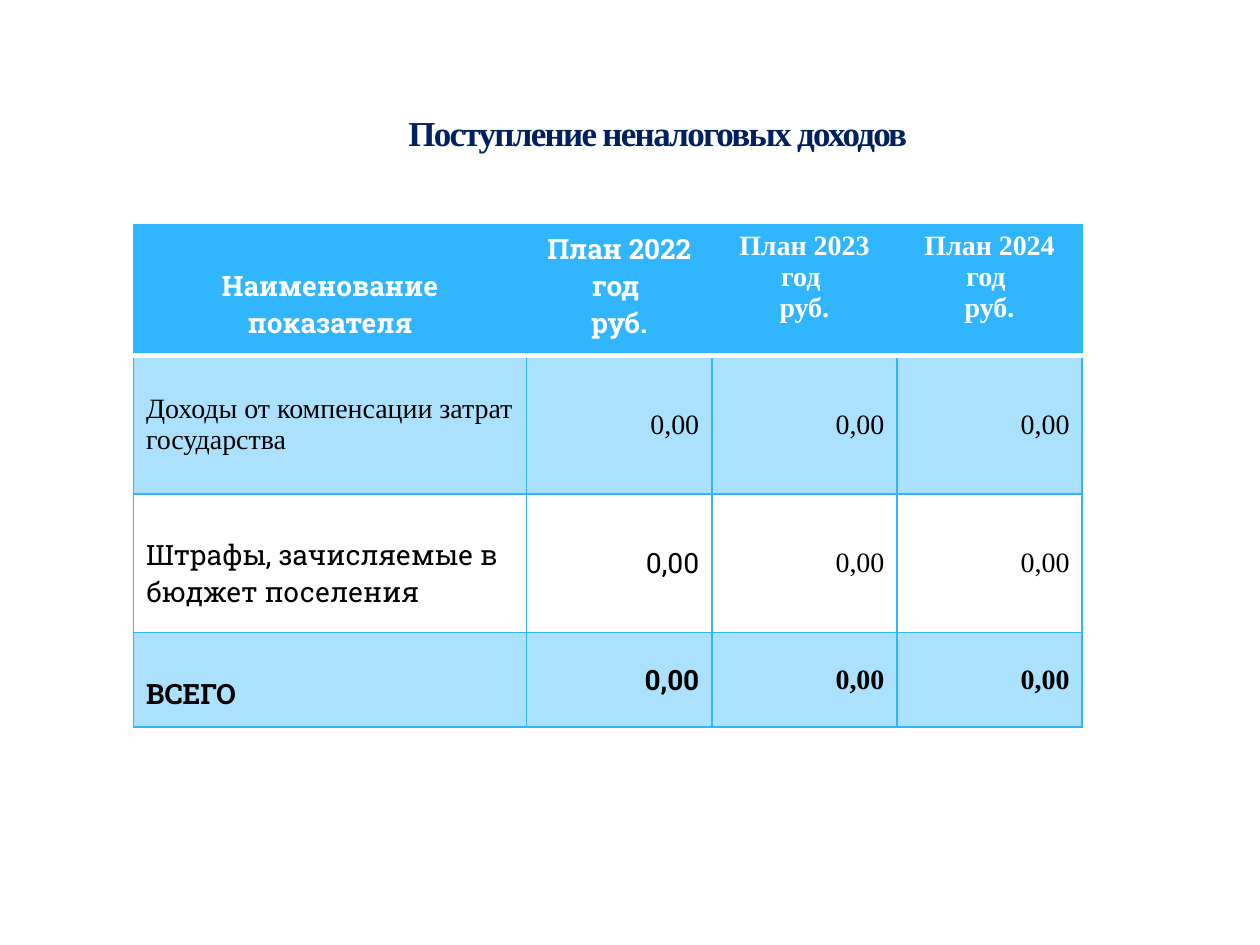
from pptx import Presentation
from pptx.dml.color import RGBColor
from pptx.enum.text import MSO_ANCHOR, PP_ALIGN
from pptx.oxml import parse_xml
from pptx.oxml.ns import nsdecls, qn
from pptx.util import Inches, Pt
from lxml.etree import SubElement

BLUE = RGBColor(0x31, 0xB6, 0xFD)
NAVY = RGBColor(0x00, 0x20, 0x60)
WHITE = RGBColor(0xFF, 0xFF, 0xFF)
BLACK = RGBColor(0x00, 0x00, 0x00)
SLAB, TIMES = "Roboto Slab", "Times New Roman"

TITLE = "Поступление неналоговых доходов"
ROWS = [
    ["Наименование показателя"]
    + [f"План {year} год \nруб." for year in (2022, 2023, 2024)],
    ["Доходы от компенсации затрат государства"] + ["0,00"] * 3,
    ["Штрафы, зачисляемые в бюджет поселения"] + ["0,00"] * 3,
    ["ВСЕГО"] + ["0,00"] * 3,
]
FONTS = [
    [SLAB, SLAB, TIMES, TIMES],
    [TIMES] * 4,
    [SLAB, SLAB, TIMES, TIMES],
    [SLAB, SLAB, TIMES, TIMES],
]
WIDTHS = [3.12, 1.47, 1.47, 1.47]
HEIGHTS = [1.04, 1.1, 1.1, 0.75]
LEFT, TOP = 1.06, 1.78
DROP = {SLAB: 0.34, TIMES: 0.3}
LAST = len(ROWS) - 1


def write(para, text, font, size, color, bold):
    run = para.add_run()
    run.text = text
    run.font.name = font
    run.font.size = Pt(size)
    run.font.bold = bold
    run.font.color.rgb = color
    return run


def edge(cell, side, color, width):
    cell._tc.get_or_add_tcPr().append(parse_xml(
        f'<a:ln{side} {nsdecls("a")} w="{Pt(width)}"><a:solidFill>'
        f'<a:srgbClr val="{color}"/></a:solidFill></a:ln{side}>'))


def paint(cell, row):
    for side in "LRTB":
        seam = (row, side) in ((0, "B"), (1, "T"))
        edge(cell, side, WHITE if seam else BLUE, 3 if seam else 1)
    if row == 2:
        cell.fill.background()
        return
    cell.fill.solid()
    cell.fill.fore_color.rgb = BLUE
    if row:
        tint = cell._tc.tcPr.find(qn("a:solidFill"))[0]
        SubElement(tint, qn("a:alpha")).set("val", "40000")


def fill(cell, row, col):
    font = FONTS[row][col]
    head = row == 0
    if col == 0:
        cell.margin_top = Inches(DROP[font])
    elif not head:
        cell.vertical_anchor = MSO_ANCHOR.MIDDLE
    align = (PP_ALIGN.CENTER if head else
             PP_ALIGN.RIGHT if col else PP_ALIGN.LEFT)
    frame = cell.text_frame
    for i, line in enumerate(ROWS[row][col].split("\n")):
        para = frame.add_paragraph() if i else frame.paragraphs[0]
        para.alignment = align
        write(para, line, font, 16, WHITE if head else BLACK,
              row in (0, LAST))
    paint(cell, row)


def main():
    deck = Presentation()
    deck.slide_width, deck.slide_height = Inches(10), Inches(7.5)
    slide = deck.slides.add_slide(deck.slide_layouts[5])

    title = slide.shapes.title
    title.left, title.top = Inches(1.38), Inches(0.68)
    title.width, title.height = Inches(7.68), Inches(0.74)
    title.text_frame.vertical_anchor = MSO_ANCHOR.MIDDLE
    para = title.text_frame.paragraphs[0]
    para.alignment = PP_ALIGN.CENTER
    run = write(para, TITLE, TIMES, 20, NAVY, True)
    run._r.get_or_add_rPr().set("spc", "-100")

    table = slide.shapes.add_table(
        len(ROWS), len(WIDTHS), Inches(LEFT), Inches(TOP),
        Inches(sum(WIDTHS)), Inches(sum(HEIGHTS))).table
    table.first_row = table.horz_banding = False
    for col, width in enumerate(WIDTHS):
        table.columns[col].width = Inches(width)
    for row, height in enumerate(HEIGHTS):
        table.rows[row].height = Inches(height)
        for col in range(len(WIDTHS)):
            fill(table.cell(row, col), row, col)

    deck.save("out.pptx")


if __name__ == "__main__":
    main()
